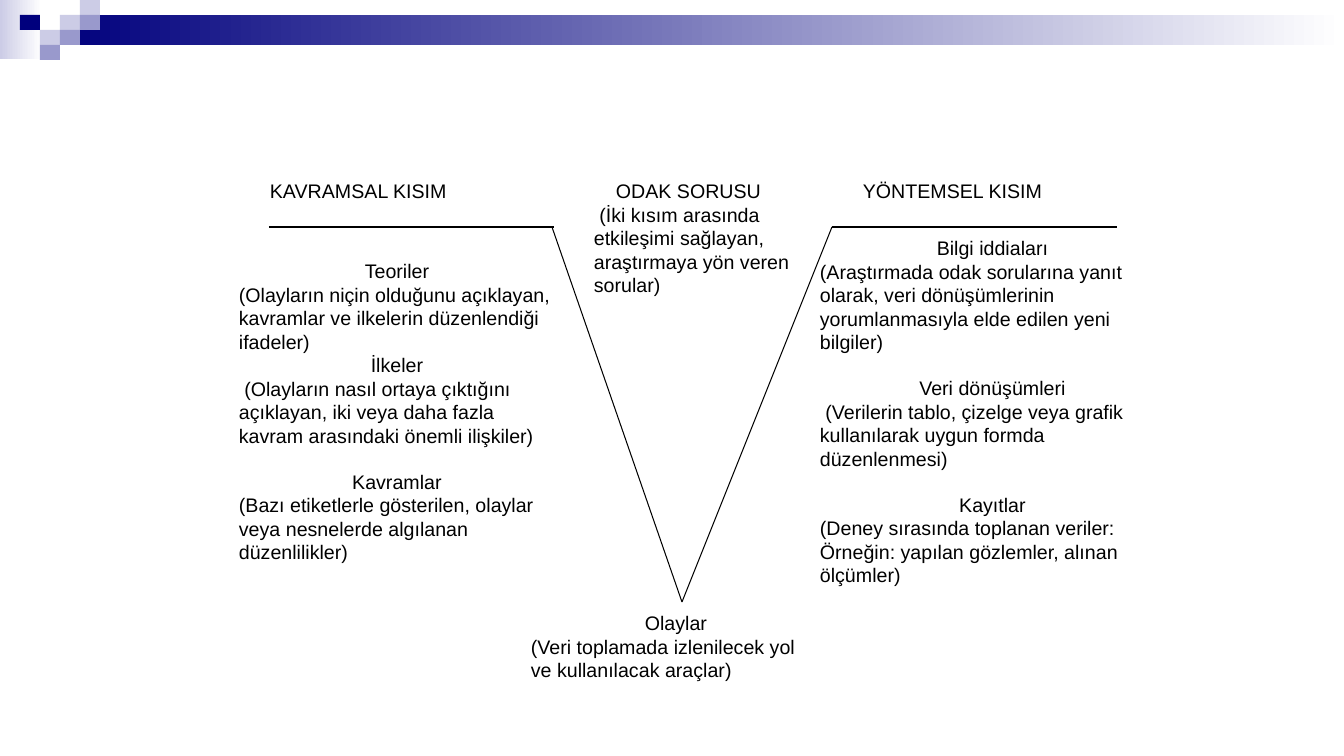
from dataclasses import dataclass

from lxml import etree
from pptx import Presentation
from pptx.dml.color import RGBColor
from pptx.enum.shapes import MSO_CONNECTOR, MSO_SHAPE
from pptx.enum.text import PP_ALIGN
from pptx.oxml.ns import qn
from pptx.util import Pt

RECT = MSO_SHAPE.RECTANGLE
LINE = MSO_CONNECTOR.STRAIGHT
LEFT = PP_ALIGN.LEFT
MID = PP_ALIGN.CENTER
SCALE = 914400 / 100.8


@dataclass(frozen=True)
class Theme:
    font: str = "Arial"
    size: int = 14
    gap: int = 16
    rule: float = 0.75
    ink: str = "000000"
    navy: str = "00007D"
    mid: str = "9999CC"
    pale: str = "CCCCE6"
    white: str = "FFFFFF"


def px(n):
    return round(n * SCALE)


def rgb(code):
    return RGBColor.from_string(code)


class Board:
    def __init__(self, deck, theme):
        self.theme = theme
        self.slide = deck.slides.add_slide(deck.slide_layouts[6])

    def rect(self, x, y, w, h, *tints):
        box = self.slide.shapes.add_shape(RECT, px(x), px(y), px(w), px(h))
        box.shadow.inherit = False
        box.line.fill.background()
        if len(tints) == 1:
            box.fill.solid()
            box.fill.fore_color.rgb = rgb(tints[0])
        else:
            box.fill.gradient()
            box.fill.gradient_angle = 0
            for stop, tint in zip(box.fill.gradient_stops, tints):
                stop.color.rgb = rgb(tint)

    def line(self, x1, y1, x2, y2):
        rule = self.slide.shapes.add_connector(LINE, px(x1), px(y1), px(x2), px(y2))
        rule.line.color.rgb = rgb(self.theme.ink)
        rule.line.width = Pt(self.theme.rule)
        etree.SubElement(rule.element.spPr, qn("a:effectLst"))

    def text(self, x, y, w, h, paras):
        frame = self.slide.shapes.add_textbox(px(x), px(y), px(w), px(h)).text_frame
        frame.word_wrap = True
        for i, (words, align, gap, indent) in enumerate(paras):
            para = frame.add_paragraph() if i else frame.paragraphs[0]
            para.alignment = align
            if gap:
                para.space_before = Pt(self.theme.gap)
            if indent:
                para._p.get_or_add_pPr().set("indent", str(px(indent)))
            run = para.add_run()
            run.text = words
            run.font.name = self.theme.font
            run.font.size = Pt(self.theme.size)
            run.font.color.rgb = rgb(self.theme.ink)


def term(head, note, gap=False):
    return [(head, MID, gap, 0), (note, LEFT, False, 0)]


def label(words, indent=0):
    return [(words, LEFT, False, indent)]


def main():
    deck = Presentation()
    deck.slide_width, deck.slide_height = px(1344), px(756)
    theme = Theme()
    board = Board(deck, theme)

    board.rect(0, 0, 42, 59, theme.pale, theme.white)
    board.rect(60, 15, 1284, 30, theme.navy, theme.white)
    tiles = [
        (3, 1, theme.pale), (4, 0, theme.pale), (4, 1, theme.mid),
        (2, 2, theme.pale), (1, 1, theme.navy), (3, 2, theme.mid),
        (2, 3, theme.mid),
    ]
    for col, row, tint in tiles:
        board.rect(20 * col, 15 * row, 20, 15, tint)

    top, tip = 227, 602
    board.line(269, top, 554, top)
    board.line(552, top, 682, tip)
    board.line(682, tip, 832, top)
    board.line(832, top, 1117, top)

    board.text(229, 254, 336, 319, [
        *term("Teoriler", "(Olayların niçin olduğunu açıklayan, kavramlar ve ilkelerin düzenlendiği ifadeler)"),
        *term("İlkeler", " (Olayların nasıl ortaya çıktığını açıklayan, iki veya daha fazla kavram arasındaki önemli ilişkiler)"),
        *term("Kavramlar", "(Bazı etiketlerle gösterilen, olaylar veya nesnelerde algılanan düzenlilikler)", True),
    ])
    board.text(584, 174, 235, 129, [
        *label("ODAK SORUSU", 22),
        *label(" (İki kısım arasında etkileşimi sağlayan, araştırmaya yön veren sorular)"),
    ])
    board.text(521, 606, 310, 82, term(
        "Olaylar", "(Veri toplamada izlenilecek yol ve kullanılacak araçlar)"))
    board.text(810, 231, 365, 367, [
        *term("Bilgi iddiaları", "(Araştırmada odak sorularına yanıt olarak, veri dönüşümlerinin yorumlanmasıyla elde edilen yeni bilgiler)"),
        *term("Veri dönüşümleri", " (Verilerin tablo, çizelge veya grafik kullanılarak uygun formda düzenlenmesi)", True),
        *term("Kayıtlar", "(Deney sırasında toplanan veriler: Örneğin: yapılan gözlemler, alınan ölçümler)", True),
    ])
    board.text(260, 174, 294, 34, label("KAVRAMSAL KISIM"))
    board.text(853, 174, 264, 34, label("YÖNTEMSEL KISIM"))

    deck.save("out.pptx")


if __name__ == "__main__":
    main()
